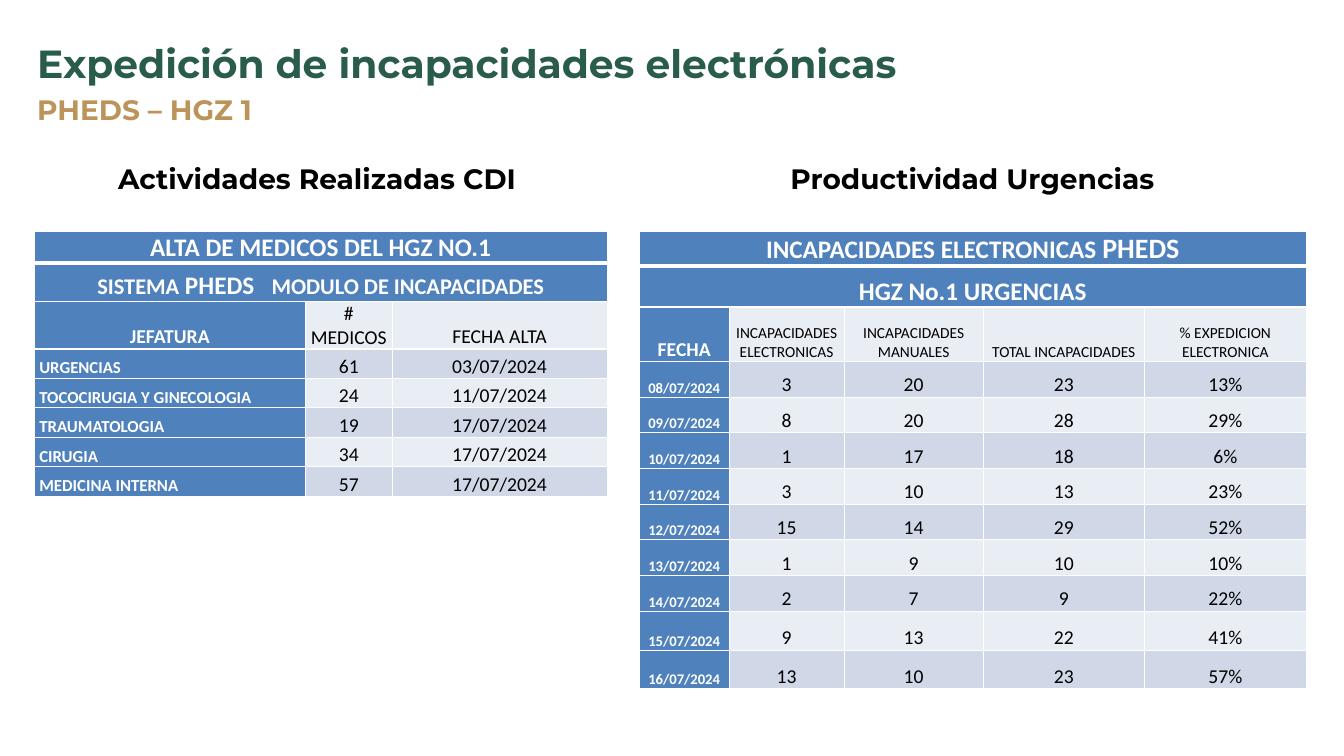
from lxml import etree
from pptx import Presentation
from pptx import util as u
from pptx.dml.color import RGBColor
from pptx.enum import text
from pptx.oxml import ns

COLORS = {
    "green": "2A5C4B", "gold": "BC945A", "blue": "4F81BD", "white": "FFFFFF",
    "black": "000000", "dark band": "D0D8E8", "light band": "E9EDF4",
}
LEFT, CENTER = text.PP_ALIGN.LEFT, text.PP_ALIGN.CENTER


class Report:
    """Holds the style and the current page; lengths are percentages of the page."""

    heading_font, table_font = "Montserrat", "Calibri"

    def __init__(self, deck):
        self.deck = deck
        self.page = deck.slides.add_slide(deck.slide_layouts[6])

    def across(self, share):
        return u.Emu(round(self.deck.slide_width * share / 100))

    def down(self, share):
        return u.Emu(round(self.deck.slide_height * share / 100))

    def style(self, span, font, size, color):
        span.font.name = font
        span.font.size = u.Pt(size)
        span.font.color.rgb = RGBColor.from_string(COLORS[color])

    def heading(self, words, left, top, width, height, size, color, align=LEFT, main=False):
        box = self.page.shapes.add_textbox(
            self.across(left), self.down(top), self.across(width), self.down(height))
        frame = box.text_frame
        frame.text = words
        frame.word_wrap = True
        para = frame.paragraphs[0]
        para.alignment = align
        if main:
            frame.auto_size = text.MSO_AUTO_SIZE.SHAPE_TO_FIT_TEXT
        else:
            frame.vertical_anchor = text.MSO_ANCHOR.BOTTOM
            para.line_spacing = 0.9
        self.style(para.runs[0], self.heading_font, size, color)
        para.runs[0].font.bold = True

    def borders(self, cell, top, bottom):
        properties = cell._tc.get_or_add_tcPr()
        for side, width in (("L", 1), ("R", 1), ("T", top), ("B", bottom)):
            line = etree.SubElement(properties, ns.qn(f"a:ln{side}"), w=str(u.Pt(width)))
            fill = etree.SubElement(line, ns.qn("a:solidFill"))
            etree.SubElement(fill, ns.qn("a:srgbClr"), val=COLORS["white"])

    def cell(self, cell, spans, fill, color, align=CENTER):
        """Fill a cell with (words, size) spans; white text is bold."""
        cell.margin_left = cell.margin_right = u.Inches(0.05)
        cell.margin_top = cell.margin_bottom = 0
        cell.vertical_anchor = text.MSO_ANCHOR.BOTTOM
        cell.fill.solid()
        cell.fill.fore_color.rgb = RGBColor.from_string(COLORS[fill])
        para = cell.text_frame.paragraphs[0]
        para.alignment = align
        for words, size in spans:
            span = para.add_run()
            span.text = words
            self.style(span, self.table_font, size, color)
            span.font.bold = color == "white"

    def table(self, left, top, columns, rows, banners, header, records,
              header_size, label_size, label_align):
        """Two merged banner rows, a header row and banded records."""
        frame = self.page.shapes.add_table(
            len(rows), len(columns), self.across(left), self.down(top),
            self.across(sum(columns)), self.down(sum(rows)))
        table = frame.table
        table.first_row = table.horz_banding = False
        for column, width in zip(table.columns, columns):
            column.width = self.across(width)
        for row, height in zip(table.rows, rows):
            row.height = self.down(height)
        for r in range(len(rows)):
            for c in range(len(columns)):
                self.borders(table.cell(r, c), 3 if r == 1 else 1, 3 if r == 0 else 1)

        for r, spans in enumerate(banners):
            table.cell(r, 0).merge(table.cell(r, len(columns) - 1))
            self.cell(table.cell(r, 0), spans, "blue", "white")
        for r, record in enumerate([header] + records):
            for c, words in enumerate(record):
                is_label, is_header = c == 0, r == 0
                if is_label:
                    size = 14 if is_header else label_size
                    fill, color = "blue", "white"
                else:
                    size = header_size if is_header else 14
                    fill, color = "dark band" if r % 2 else "light band", "black"
                align = label_align if is_label and not is_header else CENTER
                self.cell(table.cell(r + len(banners), c), [(words, size)], fill, color, align)


def main():
    deck = Presentation()
    deck.slide_width, deck.slide_height = u.Inches(13.33), u.Inches(7.5)
    report = Report(deck)

    report.heading("Expedición de incapacidades electrónicas",
                   2.03, 4.53, 97.22, 7.6, 28, "green", main=True)
    report.heading("PHEDS – HGZ 1", 2.03, 10.93, 86.27, 6.53, 20, "gold")

    report.table(
        2.55, 30.67, [20.18, 6.45, 16], [4.13, 5.1, 6.27] + [3.9] * 5,
        [[("ALTA DE MEDICOS DEL HGZ NO.1", 18)],
         [("SISTEMA", 16), (" PHEDS   ", 18), ("MODULO DE INCAPACIDADES", 16)]],
        ["JEFATURA", "# MEDICOS", "FECHA ALTA"],
        [["URGENCIAS", "61", "03/07/2024"],
         ["TOCOCIRUGIA Y GINECOLOGIA", "24", "11/07/2024"],
         ["TRAUMATOLOGIA", "19", "17/07/2024"],
         ["CIRUGIA", "34", "17/07/2024"],
         ["MEDICINA INTERNA", "57", "17/07/2024"]],
        header_size=14, label_size=12, label_align=LEFT)

    daily_counts = [(3, 20, 13), (8, 20, 29), (1, 17, 6), (3, 10, 23), (15, 14, 52),
                    (1, 9, 10), (2, 7, 22), (9, 13, 41), (13, 10, 57)]
    report.table(
        47.56, 30.67, [6.7, 8.55, 10.35, 12, 12.05],
        [4.55, 5.4, 7.2] + [4.72] * 7 + [5.15, 5.05],
        [[("INCAPACIDADES ELECTRONICAS ", 18), ("PHEDS", 20)],
         [("HGZ No.1 URGENCIAS", 18)]],
        ["FECHA", "INCAPACIDADES ELECTRONICAS", "INCAPACIDADES MANUALES",
         "TOTAL INCAPACIDADES", "% EXPEDICION ELECTRONICA"],
        [[f"{day:02}/07/2024", str(electronic), str(manual),
          str(electronic + manual), f"{percent}%"]
         for day, (electronic, manual, percent) in enumerate(daily_counts, 8)],
        header_size=11, label_size=10.5, label_align=CENTER)

    for words, left, width in (("Actividades Realizadas CDI", 2.03, 43.14),
                               ("Productividad Urgencias", 47.56, 49.59)):
        report.heading(words, left, 20, width, 6.53, 20, "black", CENTER)

    deck.save("out.pptx")


if __name__ == "__main__":
    main()
